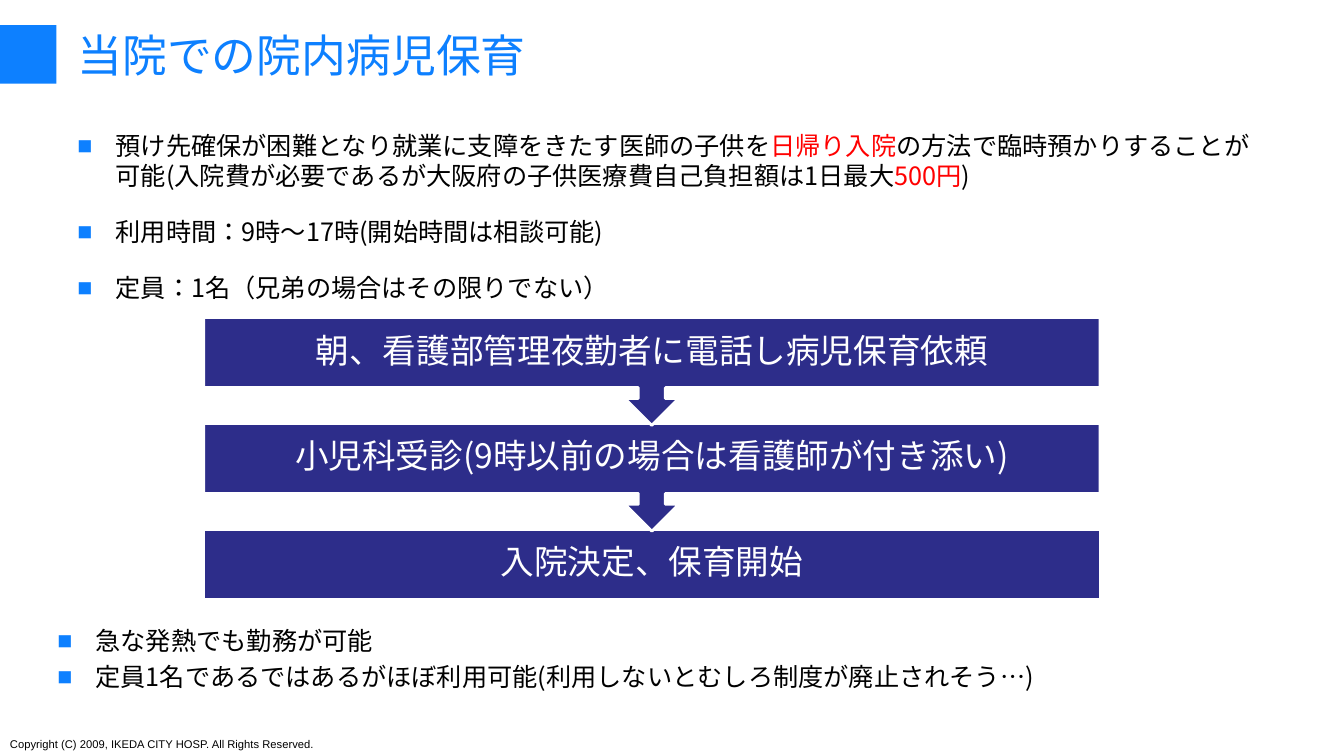
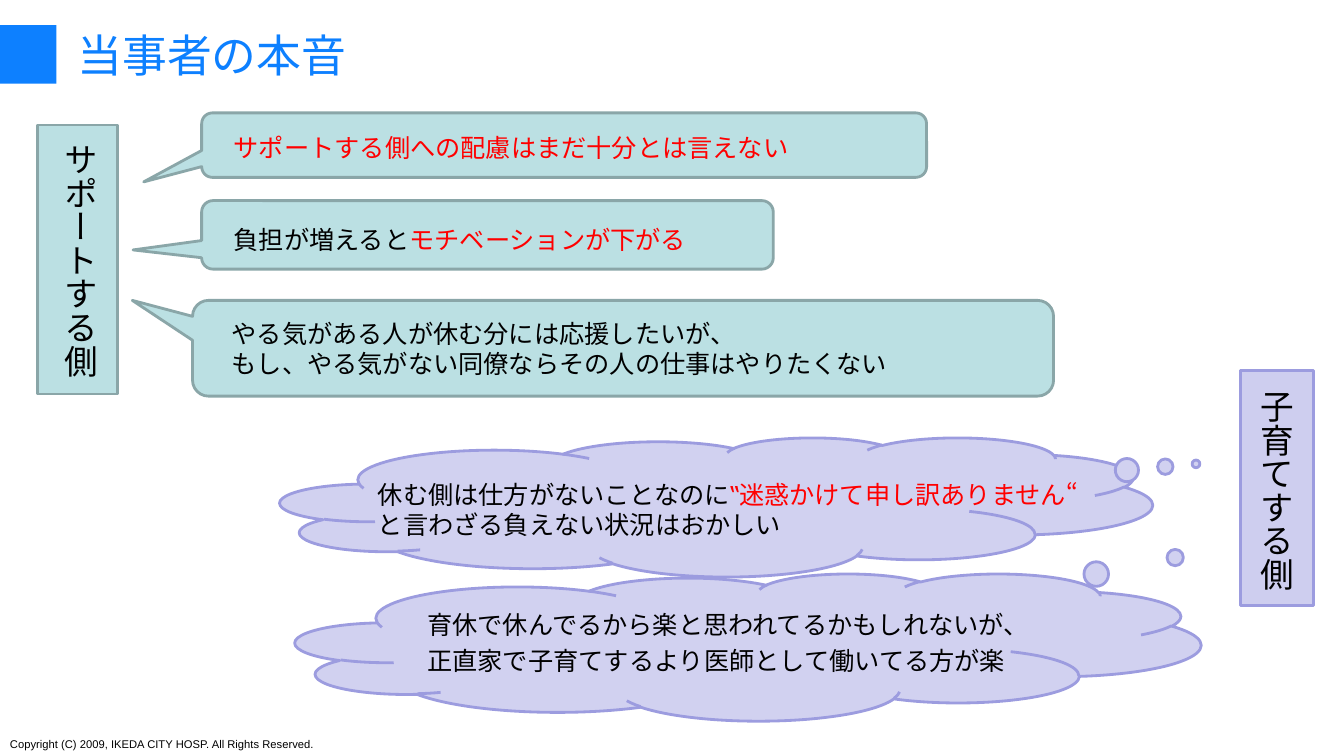
from lxml import etree
from pptx import Presentation
from pptx.dml.color import RGBColor
from pptx.enum.lang import MSO_LANGUAGE_ID
from pptx.enum.shapes import MSO_SHAPE
from pptx.enum.text import MSO_ANCHOR, PP_ALIGN
from pptx.oxml.ns import qn
from pptx.util import Emu, Pt

RECT = MSO_SHAPE.RECTANGLE
ARROW_BOX = MSO_SHAPE.UP_ARROW_CALLOUT
SPEECH = MSO_SHAPE.ROUNDED_RECTANGULAR_CALLOUT
CLOUD = MSO_SHAPE.CLOUD_CALLOUT
MIDDLE, CENTER = MSO_ANCHOR.MIDDLE, PP_ALIGN.CENTER
JAPANESE = MSO_LANGUAGE_ID.JAPANESE

PX = 9144  # 100 px to the inch
JP = "Noto Sans CJK JP"
BLUE, NAVY, RED, BLACK, WHITE = "0D80FF", "2D2D8A", "FF0000", "000000", "FFFFFF"
TEAL, TEAL_LINE = "BBE0E3", "8AA6A8"
LILAC, LILAC_LINE, LILAC_BOX = "D1D1F0", "9C9CDF", "CECEEF"
LEADING = 1.19
LINE_GAP, ITEM_GAP = 4.3, 18.6
FOOTER = "Copyright (C) 2009, IKEDA CITY HOSP. All Rights Reserved."


def rgb(value):
    return RGBColor.from_string(value)


def add_shape(s, kind, box, fill, line=None, adj=(), rotation=0):
    sp = s.shapes.add_shape(kind, *[Emu(v * PX) for v in box])
    sp.shadow.inherit = False
    sp.rotation = rotation
    sp.fill.solid()
    sp.fill.fore_color.rgb = rgb(fill)
    if line:
        sp.line.color.rgb = rgb(line)
        sp.line.width = Pt(2)
    else:
        sp.line.fill.background()
    for i, value in enumerate(adj):
        sp.adjustments[i] = value


def add_text(s, box, paragraphs, size=18, color=BLACK, font=JP, gap=0,
             bullet=False, vertical=False, frame=None, para=None):
    """Each paragraph is a list of runs: plain text or (text, color)."""
    tf = s.shapes.add_textbox(*[Emu(v * PX) for v in box]).text_frame
    for name, value in {"word_wrap": True, **(frame or {})}.items():
        setattr(tf, name, value)
    if vertical:
        tf._txBody.bodyPr.set("vert", "eaVert")
    for i, runs in enumerate(paragraphs):
        p = tf.paragraphs[0] if i == 0 else tf.add_paragraph()
        formats = {"line_spacing": Pt(round(size * LEADING, 1)),
                   "space_before": Pt(gap if i else 0), **(para or {})}
        for name, value in formats.items():
            setattr(p, name, value)
        if bullet:
            pPr = p._p.get_or_add_pPr()
            pPr.set("marL", str(38 * PX))
            pPr.set("indent", str(-38 * PX))
            clr = etree.SubElement(pPr, qn("a:buClr"))
            etree.SubElement(clr, qn("a:srgbClr"), val=BLUE)
            etree.SubElement(pPr, qn("a:buSzPct"), val="60000")
            etree.SubElement(pPr, qn("a:buFont"), typeface=JP)
            etree.SubElement(pPr, qn("a:buChar"), char="■")
        for run in runs:
            text, run_color = (run, color) if isinstance(run, str) else run
            r = p.add_run()
            r.text = text
            formats = {"size": Pt(size), "name": font, "language_id": JAPANESE}
            for name, value in formats.items():
                setattr(r.font, name, value)
            r.font.color.rgb = rgb(run_color)
            etree.SubElement(r._r.get_or_add_rPr(), qn("a:ea"), typeface=font)


prs = Presentation()
prs.slide_width, prs.slide_height = Emu(1333 * PX), Emu(750 * PX)

# Shared band, title and footer
slides = []
for title in ["当院での院内病児保育", "当事者の本音"]:
    s = prs.slides.add_slide(prs.slide_layouts[6])
    add_shape(s, RECT, (0, 25, 56, 58), BLUE)
    add_text(s, (67, 25, 1200, 58), [[title]], size=32, color=BLUE,
             frame={"vertical_anchor": MIDDLE})
    add_text(s, (0, 727, 328, 24), [[FOOTER]], size=8, font="Arial")
    slides.append(s)
care, voices = slides

# Slide 1: conditions of use
add_text(care, (67, 125, 1200, 230), [
    ["預け先確保が困難となり就業に支障をきたす医師の子供を", ("日帰り入院", RED),
     "の方法で臨時預かりすることが可能(入院費が必要であるが大阪府の子供医療費自己負担額は1日最大",
     ("500円", RED), ")"],
    ["利用時間：9時～17時(開始時間は相談可能)"],
    ["定員：1名（兄弟の場合はその限りでない）"],
], gap=ITEM_GAP, bullet=True)

# Slide 1: flow, drawn from the last step up so that arrows lie on top
steps = ["朝、看護部管理夜勤者に電話し病児保育依頼",
         "小児科受診(9時以前の場合は看護師が付き添い)",
         "入院決定、保育開始"]
last = len(steps) - 1
for i in range(last, -1, -1):
    top = 315 + 105 * i
    if i == last:
        add_shape(care, RECT, (202, top, 889, 70), NAVY, WHITE)
    else:
        add_shape(care, ARROW_BOX, (202, top, 889, 107), NAVY, WHITE, rotation=180)
    add_text(care, (202, top - 3, 889, 70), [[steps[i]]], size=24, color=WHITE,
             frame={"vertical_anchor": MIDDLE}, para={"alignment": CENTER})

# Slide 1: results
add_text(care, (47, 616, 1200, 120), [
    ["急な発熱でも勤務が可能"],
    ["定員1名であるではあるがほぼ利用可能(利用しないとむしろ制度が廃止されそう…)"],
], gap=LINE_GAP, bullet=True)

# Slide 2: speech bubbles of the supporters and thought clouds of the parents
bubbles = [
    (CLOUD, (293, 569, 898, 146), (0.55, -0.71), (414, 600, 689, 92), LINE_GAP,
     [["育休で休んでるから楽と思われてるかもしれないが、"],
      ["正直家で子育てするより医師として働いてる方が楽"]]),
    (CLOUD, (278, 434, 865, 138), (0.545, -0.31), (365, 471, 770, 71), 0,
     [["休む側は仕方がないことなのに", ("‟迷惑かけて申し訳ありません“", RED)],
      ["と言わざる負えない状況はおかしい"]]),
    (SPEECH, (200, 112, 719, 64), (-0.58, 0.57), (222, 127, 792, 40), 0,
     [[("サポートする側への配慮はまだ十分とは言えない", RED)]]),
    (SPEECH, (200, 199, 567, 68), (-0.62, 0.22), (222, 218, 613, 47), 0,
     [["負担が増えると", ("モチベーションが下がる", RED)]]),
    (SPEECH, (191, 298, 854, 95), (-0.57, -0.5), (220, 311, 794, 69), 0,
     [["やる気がある人が休む分には応援したいが、"],
      ["もし、やる気がない同僚ならその人の仕事はやりたくない"]]),
]
for kind, box, adj, text_box, gap, paragraphs in bubbles:
    fill, line = (LILAC, LILAC_LINE) if kind == CLOUD else (TEAL, TEAL_LINE)
    add_shape(voices, kind, box, fill, line, [round(a, 2) for a in adj])
    add_text(voices, text_box, paragraphs, gap=gap)

# Slide 2: vertical labels of the two sides
sides = [
    ("サポートする側", (37, 124, 80, 267), (49, 132, 61, 302), TEAL, TEAL_LINE),
    ("子育てする側", (1230, 368, 73, 233), (1235, 377, 61, 225), LILAC_BOX, LILAC_LINE),
]
for label, box, text_box, fill, line in sides:
    add_shape(voices, RECT, box, fill, line)
    add_text(voices, text_box, [[label]], size=24, vertical=True,
             frame={"vertical_anchor": MIDDLE})

prs.save("out.pptx")
